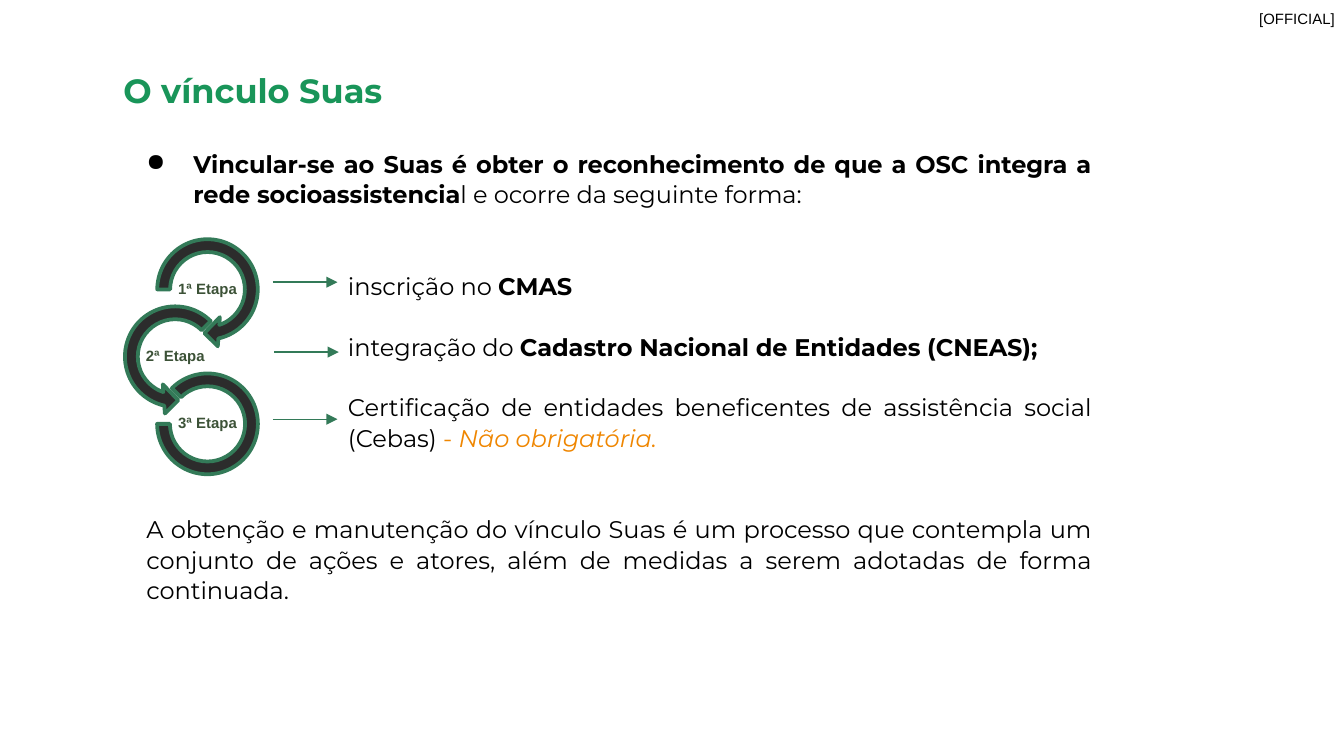
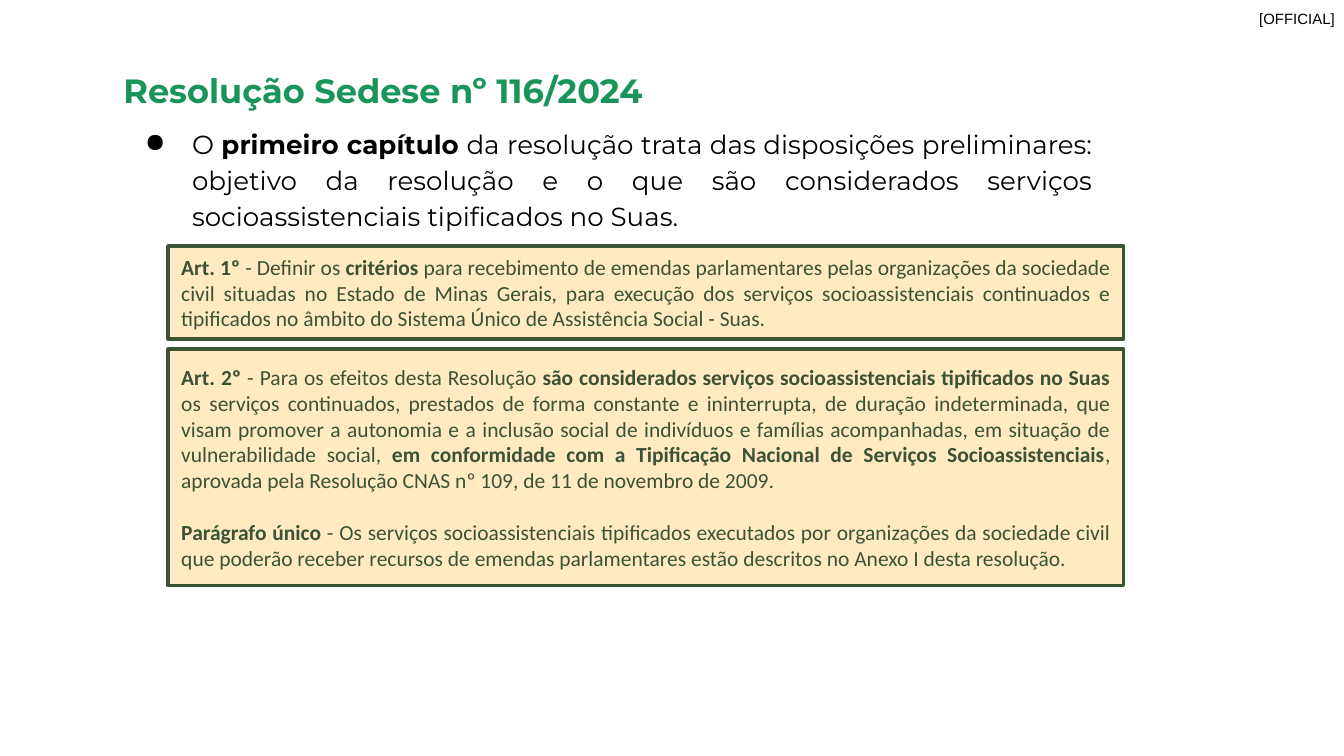
import pptx
import pptx.dml.color
import pptx.enum.shapes
import pptx.enum.text
import pptx.oxml
import pptx.oxml.ns
import pptx.util
from lxml import etree

Pt = pptx.util.Pt
MSO = pptx.enum.shapes.MSO_SHAPE
ANCHOR = pptx.enum.text.MSO_ANCHOR
ALIGN = pptx.enum.text.PP_ALIGN
qn = pptx.oxml.ns.qn

BLACK, GREEN, TEAL = "000000", "199559", "337A58"
OLIVE, DARK, ORANGE, SAND = "3C5237", "2C2C2C", "EF8600", "FFCC66"
B = {"bold": True}

TITLE = {"name": "Montserrat", "size": Pt(18), "bold": True, "color": GREEN}
TAG = {"name": "Arial", "size": Pt(8), "color": BLACK}
LABEL = {"name": "Arial", "size": Pt(8), "bold": True, "color": OLIVE}
BODY = {"name": "Montserrat", "size": Pt(12.9), "color": BLACK}
LEAD = {"name": "Montserrat", "size": Pt(14), "color": BLACK}
ARTICLE = {"name": "Calibri", "size": Pt(11.5), "color": OLIVE}


def rgb(color):
    """Turn a hex string into a colour."""
    return pptx.dml.color.RGBColor.from_string(color)


def apply(obj, fmt):
    """Set each attribute of obj from a dict of format values."""
    for key, value in fmt.items():
        if key == "color":
            obj.color.rgb = rgb(value)
        else:
            setattr(obj, key, value)


def set_indent(p, left, first=0, bullet=None):
    """Give a paragraph its left and first-line indents and a bullet."""
    pPr = p._p.get_or_add_pPr()
    pPr.set("marL", str(Pt(left)))
    pPr.set("indent", str(Pt(first)))
    if bullet:
        clr = etree.SubElement(pPr, qn("a:buClr"))
        etree.SubElement(clr, qn("a:srgbClr")).set("val", BLACK)
        etree.SubElement(pPr, qn("a:buChar")).set("char", bullet)


def write(tf, paragraphs, font):
    """Fill a text frame with (runs, paragraph format, indent) entries."""
    for i, (runs, fmt, indent) in enumerate(paragraphs):
        p = tf.add_paragraph() if i else tf.paragraphs[0]
        apply(p, fmt)
        if indent:
            set_indent(p, *indent)
        for text, extra in runs:
            r = p.add_run()
            r.text = text
            apply(r.font, {**font, **extra})


def set_frame(tf, inset, **fmt):
    """Set equal insets and the other values of a text frame."""
    sides = ("left", "top", "right", "bottom")
    apply(tf, {**{f"margin_{side}": Pt(inset) for side in sides}, **fmt})


def add_text(s, box, paragraphs, font, inset=7.2, **fmt):
    """Add a text box."""
    tf = s.shapes.add_textbox(*map(Pt, box)).text_frame
    set_frame(tf, inset, **{"word_wrap": True, **fmt})
    write(tf, paragraphs, font)


def add_outlined(s, kind, box, fill, line):
    """Add a filled preset shape with a 2 pt outline."""
    sp = s.shapes.add_shape(kind, *map(Pt, box))
    sp.shadow.inherit = False
    sp.fill.solid()
    sp.fill.fore_color.rgb = rgb(fill)
    apply(sp.line, {"color": line, "width": Pt(2)})
    return sp


def add_arrow(s, x, y, length):
    """Add a thin horizontal arrow pointing right."""
    c = s.shapes.add_connector(pptx.enum.shapes.MSO_CONNECTOR.STRAIGHT,
                               Pt(x), Pt(y), Pt(x + length), Pt(y))
    apply(c.line, {"color": TEAL, "width": Pt(0.75)})
    etree.SubElement(c.line._get_or_add_ln(), qn("a:tailEnd")).set("type", "triangle")
    etree.SubElement(c._element.spPr, qn("a:effectLst"))


def add_base(prs, title):
    """Add a slide with the classification tag and the title."""
    s = prs.slides.add_slide(prs.slide_layouts[6])
    add_text(s, (674.6, 5, 43.2, 9.4), [([("[OFFICIAL]", {})], {}, None)],
             TAG, inset=0, word_wrap=False)
    add_text(s, (59, 30.2, 635, 36), [([(title, {})], {}, None)], TITLE)
    return s


def add_stages(s, box):
    """Draw the chain of three stages and the arrows leading to the text."""
    x, y, w, h = box
    pitch, ring = 36, 62.6
    stages = [
        ("1ª Etapa", MSO.CIRCULAR_ARROW, ring, 17.3, (0.11, 11.423, 45, 108, 0.125)),
        ("2ª Etapa", MSO.LEFT_CIRCULAR_ARROW, ring, 0, (0.11, 11.423, 63, 189, 0.125)),
        ("3ª Etapa", MSO.BLOCK_ARC, 54, 17.3, (135, 108, 0.127)),
    ]
    for i, (label, kind, size, shift, values) in enumerate(stages):
        cx, cy = x + ring / 2 + shift, y + ring / 2 + i * pitch
        sp = add_outlined(s, kind, (cx - size / 2, cy - size / 2, size, size), DARK, TEAL)
        for n, value in enumerate(values):
            sp.adjustments[n] = value
        fmt = {"alignment": ALIGN.CENTER, "line_spacing": 0.9}
        add_text(s, (cx - 17.3, cy - 8.6, 34.6, 17.3), [([(label, {})], fmt, None)],
                 LABEL, inset=0.72, word_wrap=False, vertical_anchor=ANCHOR.MIDDLE)
    for dx, dy in ((0, 27.4), (0.7, 64.8), (0, 100.8)):
        add_arrow(s, x + w - 34.6 + dx, y + dy, 34.6)


def add_bond_text(s, box):
    """Write the lead bullet, the three stage texts and the closing text."""
    line = 16.4
    fmt = {"alignment": ALIGN.JUSTIFY, "line_spacing": 1.05}
    one, two = ({**fmt, "space_before": Pt(n * line)} for n in (1, 2))
    stage = (118.8,)
    add_text(s, box, [
        ([("Vincular-se ao Suas é obter o reconhecimento de que a OSC integra a "
           "rede socioassistencia", B),
          ("l e ocorre da seguinte forma:", {})], fmt, (36, -25.2, "●")),
        ([("inscrição no ", {}), ("CMAS", B)], two, stage),
        ([("integração do ", {}),
          ("Cadastro Nacional de Entidades (CNEAS);", B)], one, stage),
        ([("Certificação de entidades beneficentes de assistência social (Cebas) ", {}),
          ("- ", {"color": ORANGE}),
          ("Não obrigatória.", {"color": ORANGE, "italic": True})], one, stage),
        ([("A obtenção e manutenção do vínculo Suas é um processo que contempla um "
           "conjunto de ações e atores, além de medidas a serem adotadas de forma "
           "continuada.", {})], two, (10.8,)),
    ], BODY)


def add_article(s, box, paragraphs):
    """Add a translucent framed box with justified article text."""
    sp = add_outlined(s, MSO.RECTANGLE, box, SAND, OLIVE)
    clr = sp._element.spPr.find(qn("a:solidFill")).find(qn("a:srgbClr"))
    etree.SubElement(clr, qn("a:alpha")).set("val", "40000")
    apply(sp.text_frame, {"word_wrap": True, "vertical_anchor": ANCHOR.MIDDLE})
    fmt = {"alignment": ALIGN.JUSTIFY}
    gap = {**fmt, "space_before": Pt(14)}
    write(sp.text_frame, [(runs, gap if i else fmt, None)
                          for i, runs in enumerate(paragraphs)], ARTICLE)


def add_articles(s, box):
    """Stack the two article boxes."""
    x, y, w, h = box
    top, gap = 49.7, 5.5
    add_article(s, (x, y, w, top), [[
        ("Art. 1º", B), (" - Definir os ", {}), ("critérios ", B),
        ("para recebimento de emendas parlamentares pelas organizações da sociedade "
         "civil situadas no Estado de Minas Gerais, para execução dos serviços "
         "socioassistenciais continuados e tipificados no âmbito do Sistema Único de "
         "Assistência Social - Suas.", {})]])
    add_article(s, (x, y + top + gap, w, h - top - gap), [
        [("Art. 2º", B), (" - Para os efeitos desta Resolução ", {}),
         ("são considerados serviços socioassistenciais tipificados no Suas", B),
         (" os serviços continuados, prestados de forma constante e ininterrupta, de "
          "duração indeterminada, que visam promover a autonomia e a inclusão social "
          "de indivíduos e famílias acompanhadas, em situação de vulnerabilidade "
          "social, ", {}),
         ("em conformidade com a Tipificação Nacional de Serviços "
          "Socioassistenciais", B),
         (", aprovada pela Resolução CNAS nº 109, de 11 de novembro de 2009.", {})],
        [("Parágrafo único", B),
         (" - Os serviços socioassistenciais tipificados executados por organizações "
          "da sociedade civil que poderão receber recursos de emendas parlamentares "
          "estão descritos no Anexo I desta resolução.", {})]])


def add_chapter_text(s, box):
    """Write the bullet on the first chapter."""
    fmt = {"alignment": ALIGN.JUSTIFY, "line_spacing": 1.15}
    add_text(s, box, [
        ([("O ", {}), ("primeiro capítulo", B),
          (" da resolução trata das disposições preliminares: objetivo da resolução e "
           "o que são considerados serviços socioassistenciais tipificados no Suas.",
           {})], fmt, (36, -25.2, "●"))], LEAD)


def main():
    """Build the two slides."""
    prs = pptx.Presentation()
    apply(prs, {"slide_width": Pt(720), "slide_height": Pt(405)})
    s = add_base(prs, "O vínculo Suas")
    add_bond_text(s, (60.5, 72, 531.4, 269.3))
    add_stages(s, (62.6, 123.8, 118.2, 134.6))
    s = add_base(prs, "Resolução Sedese nº 116/2024")
    add_chapter_text(s, (59.8, 59, 532.8, 75.6))
    add_articles(s, (90, 131.8, 511.9, 181.9))
    prs.save("out.pptx")


if __name__ == "__main__":
    main()
